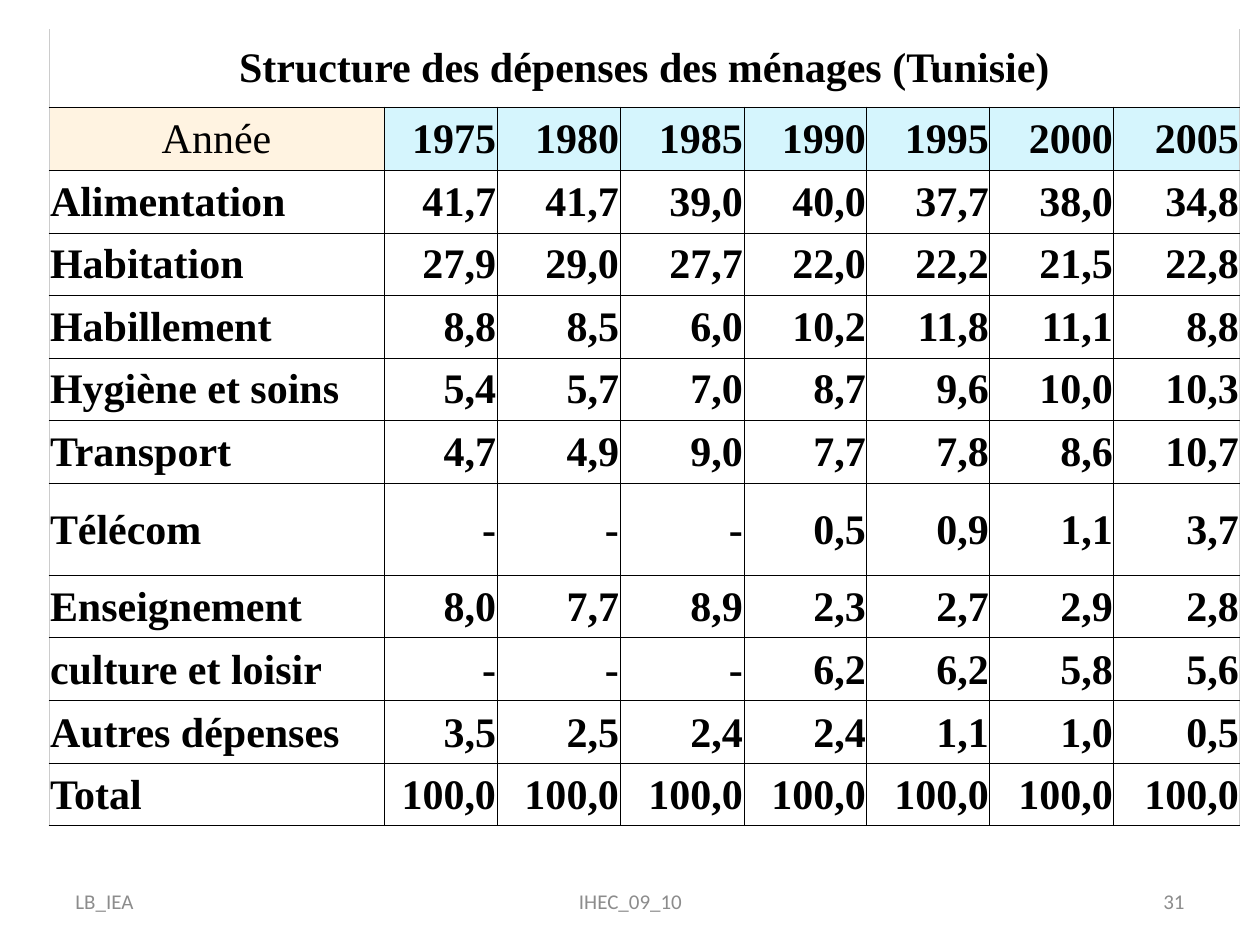
from lxml import etree
from pptx import Presentation
from pptx import util as u
from pptx.dml.color import RGBColor
from pptx.enum import text
from pptx.oxml.ns import qn

COLOURS = {"ink": "000000", "edge": "CCCCCC", "paper": "FFFFFF",
           "label": "FFF3E1", "year": "D5F5FD", "footer": "8C8C8C"}
LEFT, CENTER, RIGHT = text.PP_ALIGN.LEFT, text.PP_ALIGN.CENTER, text.PP_ALIGN.RIGHT
COLUMNS = [335, 113, 123, 124, 123, 123, 124, 126]
ROWS = [78, 63, 63, 62, 63, 62, 63, 93, 62, 63, 63, 62]
TITLE = "Structure des dépenses des ménages (Tunisie)"
SPENDING = [
    ["Année", "1975", "1980", "1985", "1990", "1995", "2000", "2005"],
    ["Alimentation", "41,7", "41,7", "39,0", "40,0", "37,7", "38,0", "34,8"],
    ["Habitation", "27,9", "29,0", "27,7", "22,0", "22,2", "21,5", "22,8"],
    ["Habillement", "8,8", "8,5", "6,0", "10,2", "11,8", "11,1", "8,8"],
    ["Hygiène et soins", "5,4", "5,7", "7,0", "8,7", "9,6", "10,0", "10,3"],
    ["Transport", "4,7", "4,9", "9,0", "7,7", "7,8", "8,6", "10,7"],
    ["Télécom", "-", "-", "-", "0,5", "0,9", "1,1", "3,7"],
    ["Enseignement", "8,0", "7,7", "8,9", "2,3", "2,7", "2,9", "2,8"],
    ["culture et loisir", "-", "-", "-", "6,2", "6,2", "5,8", "5,6"],
    ["Autres dépenses", "3,5", "2,5", "2,4", "2,4", "1,1", "1,0", "0,5"],
    ["Total"] + ["100,0"] * 7,
]


def px(count):
    return u.Emu(round(count * 914400 / 126))


class Painter:
    """Holds the style and the current slide, and draws each kind of element."""

    def __init__(self, page):
        self.page = page
        self.table_font, self.footer_font = "Times New Roman", "Calibri"

    def add_words(self, frame, words, font, size, colour, align, bold=False):
        para = frame.paragraphs[0]
        para.alignment = align
        span = para.add_run()
        span.text = words
        span.font.name, span.font.size, span.font.bold = font, u.Pt(size), bold
        span.font.color.rgb = RGBColor.from_string(COLOURS[colour])

    def borders(self, cell, **sides):
        props = cell._tc.get_or_add_tcPr()
        for side, colour in sides.items():
            line = etree.SubElement(props, qn(f"a:ln{side}"), w=str(u.Pt(0.5)))
            if colour:
                fill = etree.SubElement(line, qn("a:solidFill"))
                etree.SubElement(fill, qn("a:srgbClr"), val=COLOURS[colour])
            else:
                etree.SubElement(line, qn("a:noFill"))

    def cell(self, cell, fill, **sides):
        self.borders(cell, **sides)
        cell.fill.solid()
        cell.fill.fore_color.rgb = RGBColor.from_string(COLOURS[fill])
        cell.vertical_anchor = text.MSO_ANCHOR.MIDDLE
        cell.margin_left = cell.margin_right = cell.margin_top = px(1)
        cell.margin_bottom = 0

    def table(self, left, top, title, records):
        frame = self.page.shapes.add_table(len(ROWS), len(COLUMNS), px(left), px(top),
                                           px(sum(COLUMNS)), px(sum(ROWS)))
        grid = frame.table
        grid.first_row = grid.horz_banding = False
        for column, width in zip(grid.columns, COLUMNS):
            column.width = px(width)
        for row, height in zip(grid.rows, ROWS):
            row.height = px(height)
        last = len(COLUMNS) - 1
        for c in range(len(COLUMNS)):
            self.cell(grid.cell(0, c), "paper", L="edge", R="edge", T=None, B="ink")
        grid.cell(0, 0).merge(grid.cell(0, last))
        self.add_words(grid.cell(0, 0).text_frame, title, self.table_font, 24, "ink",
                       CENTER, True)
        for r, record in enumerate(records, 1):
            for c, words in enumerate(record):
                header, label = r == 1, c == 0
                fill = ("label" if label else "year") if header else "paper"
                align = (CENTER if header else LEFT) if label else RIGHT
                self.cell(grid.cell(r, c), fill, L="edge" if label else "ink",
                          R="edge" if c == last else "ink", T="ink", B="ink")
                self.add_words(grid.cell(r, c).text_frame, words, self.table_font, 24, "ink",
                               align, not (header and label))

    def footer(self, left, width, words, align):
        box = self.page.shapes.add_textbox(px(left), px(876), px(width), px(50))
        box.text_frame.word_wrap = True
        box.text_frame.vertical_anchor = text.MSO_ANCHOR.MIDDLE
        self.add_words(box.text_frame, words, self.footer_font, 12, "footer", align)


def main():
    deck = Presentation()
    deck.slide_width, deck.slide_height = px(1260), px(945)
    painter = Painter(deck.slides.add_slide(deck.slide_layouts[6]))
    painter.table(49, 29, TITLE, SPENDING)
    painter.footer(63, 294, "LB_IEA", LEFT)
    painter.footer(903, 294, "31", RIGHT)
    painter.footer(431, 399, "IHEC_09_10", CENTER)
    deck.save("out.pptx")


if __name__ == "__main__":
    main()
